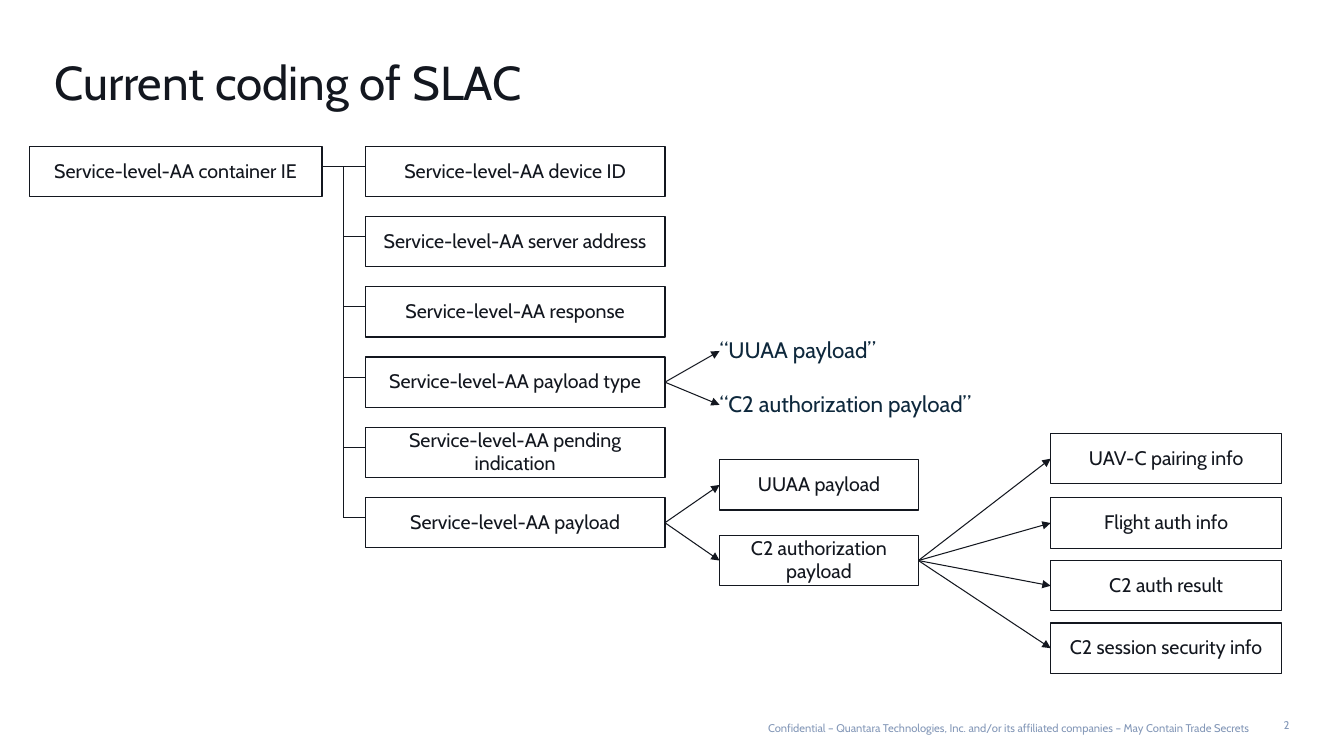
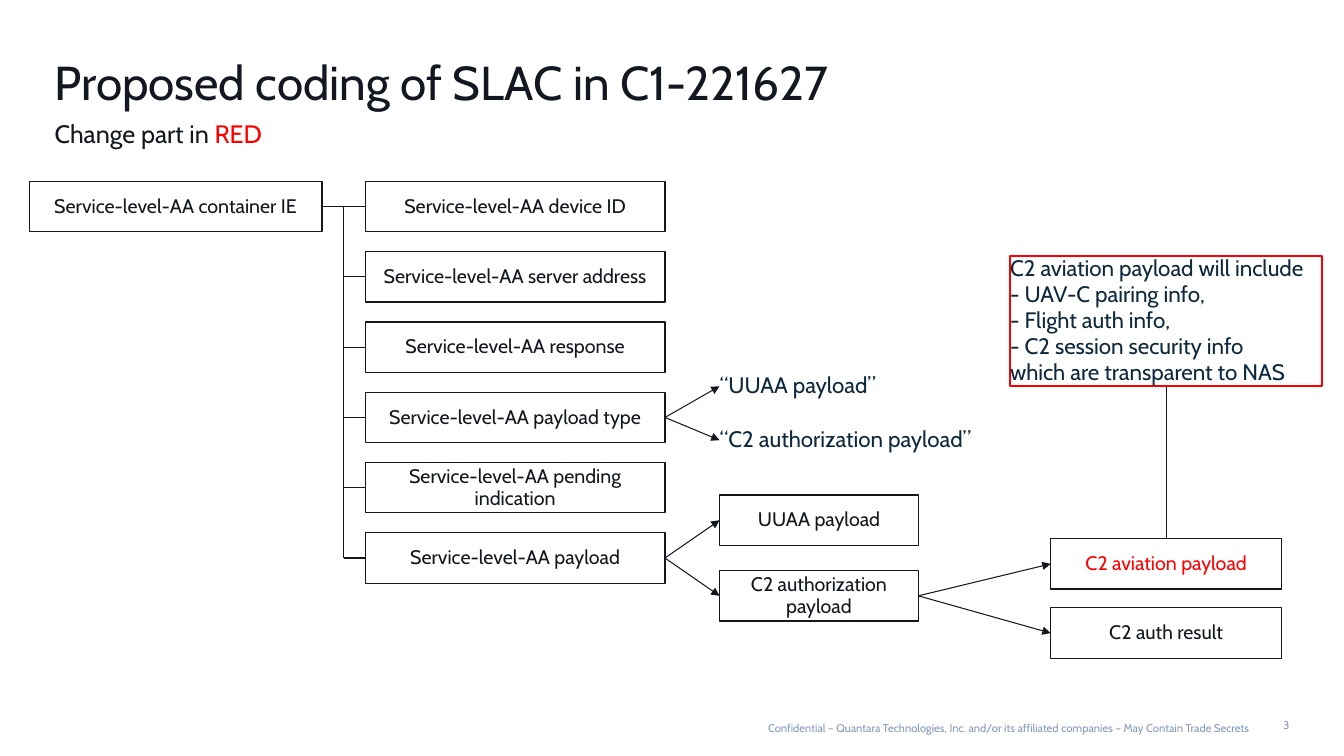
from pptx import Presentation
from pptx.dml.color import RGBColor
from pptx.enum.shapes import MSO_CONNECTOR as LINE, MSO_SHAPE as SHAPE
from pptx.enum.text import MSO_ANCHOR as ANCHOR, PP_ALIGN as ALIGN
from pptx.oxml.ns import qn
from pptx.util import Pt
from lxml.etree import SubElement

INK = RGBColor(0x13, 0x17, 0x1F)
NAVY = RGBColor(0x0E, 0x28, 0x3C)
MUTED = RGBColor(0x84, 0x98, 0xB8)
RED = RGBColor(0xFF, 0x00, 0x00)
WHITE = RGBColor(0xFF, 0xFF, 0xFF)
FONT = "Cabin"
FOOTER = ("Confidential – Quantara Technologies, Inc. and/or its affiliated "
          "companies – May Contain Trade Secrets")

# Diagram grid: column edges, box height and row pitch
ROOT, ROOT_W = 21, 209
FIELD, FIELD_W = 261, 214
LOAD, LOAD_W = 514, 142
INFO, INFO_W = 750.5, 165
SPINE = 245.5
HIGH, PITCH = 36, 50.2
MID = HIGH / 2

FIELDS = ["device ID", "server address", "response", "payload type",
          "pending indication", "payload"]
TYPES = [("“UUAA payload”", 137), ("“C2 authorization payload”", 175.5)]
LOADS = [("UUAA payload", 224), ("C2 authorization payload", 278)]
NOTE = ["C2 aviation payload will include", "- UAV-C pairing info,",
        "- Flight auth info,", "- C2 session security info",
        "which are transparent to NAS"]

# What differs: top and stub are heights, info rows are offsets from the top
SLIDES = [
    dict(num=2, title="Current coding of SLAC", top=104.4, stub=14.4,
         info=[("UAV-C pairing info", 205.2, INK),
               ("Flight auth info", 251.2, INK),
               ("C2 auth result", 296, INK),
               ("C2 session security info", 340.6, INK)]),
    dict(num=3, title="Proposed coding of SLAC in C1-221627", top=129.6, stub=18,
         sub=[("Change part in ", INK), ("RED", RED)], note=NOTE,
         info=[("C2 aviation payload", 255.2, RED),
               ("C2 auth result", 304.6, INK)]),
]


def write(shape, paras, size, align=ALIGN.LEFT, anchor=ANCHOR.TOP,
          space=0.96, pad=(0, 0)):
    """Fill a shape with paragraphs, each a list of (text, colour) runs."""
    frame = shape.text_frame
    frame.word_wrap = True
    frame.vertical_anchor = anchor
    frame.margin_left = frame.margin_right = Pt(pad[0])
    frame.margin_top = frame.margin_bottom = Pt(pad[1])
    for i, runs in enumerate(paras):
        para = frame.add_paragraph() if i else frame.paragraphs[0]
        para.alignment = align
        para.line_spacing = space
        for text, color in runs:
            run = para.add_run()
            run.text = text
            run.font.name = FONT
            run.font.size = Pt(size)
            run.font.color.rgb = color


def link(shapes, x1, y1, x2, y2, arrow=False):
    """Draw a thin line, with an arrowhead at its end if asked."""
    line = shapes.add_connector(LINE.STRAIGHT, Pt(x1), Pt(y1), Pt(x2), Pt(y2))
    line.line.color.rgb = INK
    line.line.width = Pt(0.75)
    if arrow:
        SubElement(line.line._get_or_add_ln(), qn("a:tailEnd"), type="triangle")
    SubElement(line._element.spPr, qn("a:effectLst"))


prs = Presentation()
prs.slide_width, prs.slide_height = Pt(960), Pt(540)

for page in SLIDES:
    shapes = prs.slides.add_slide(prs.slide_layouts[5]).shapes
    top = page["top"]

    # Title
    title = shapes.title
    title.left, title.top, title.width, title.height = Pt(39), Pt(43), Pt(880), Pt(36)
    write(title, [[(page["title"], INK)]], 34, anchor=ANCHOR.BOTTOM, space=0.84)

    # Footer and page number
    for text, x, y, wide, space in [(FOOTER, 518, 514.8, 375, 0.95),
                                    (str(page["num"]), 900, 512.6, 21, 1.25)]:
        foot = shapes.add_textbox(Pt(x), Pt(y), Pt(wide), Pt(10))
        write(foot, [[(text, MUTED)]], 8, ALIGN.RIGHT, ANCHOR.BOTTOM, space)

    # Subtitle
    if "sub" in page:
        sub = shapes.add_textbox(Pt(39), Pt(85.7), Pt(881), Pt(21.6))
        write(sub, [page["sub"]], 18)

    # Boxes of all four columns
    boxes = [("Service-level-AA container IE", ROOT, 0, ROOT_W, INK)]
    boxes += [(f"Service-level-AA {name}", FIELD, i * PITCH, FIELD_W, INK)
              for i, name in enumerate(FIELDS)]
    boxes += [(name, LOAD, y, LOAD_W, INK) for name, y in LOADS]
    boxes += [(name, INFO, y, INFO_W, color) for name, y, color in page["info"]]
    for text, x, y, wide, color in boxes:
        box = shapes.add_shape(SHAPE.RECTANGLE, Pt(x), Pt(top + y), Pt(wide), Pt(HIGH))
        box.shadow.inherit = False
        box.fill.solid()
        box.fill.fore_color.rgb = WHITE
        box.line.color.rgb = INK
        box.line.width = Pt(0.85)
        write(box, [[(text, color)]], 14, ALIGN.CENTER, ANCHOR.MIDDLE, pad=(7.2, 3.6))

    # Payload type values
    for text, y in TYPES:
        label = shapes.add_textbox(Pt(LOAD), Pt(top + y), Pt(223), Pt(18.5))
        write(label, [[(text, NAVY)]], 16)

    # Bracket from the container to its fields
    stub = top + page["stub"]
    link(shapes, SPINE, stub, SPINE, stub + (len(FIELDS) - 1) * PITCH)
    for i in range(len(FIELDS)):
        link(shapes, SPINE if i else ROOT + ROOT_W, stub + i * PITCH,
             FIELD, stub + i * PITCH)

    # Arrows fanning out to the right
    end = FIELD + FIELD_W
    fans = [(end, 3 * PITCH, LOAD, [y + 9.3 for _, y in TYPES]),
            (end, 5 * PITCH, LOAD, [y + MID for _, y in LOADS]),
            (LOAD + LOAD_W, LOADS[1][1], INFO, [y + MID for _, y, _ in page["info"]])]
    for x1, y1, x2, tips in fans:
        for tip in tips:
            link(shapes, x1, top + y1 + MID, x2, top + tip, arrow=True)

    # Red note above the changed box
    if "note" in page:
        x, y, wide, high = 721.5, 183, 223, 93
        link(shapes, x + wide / 2 + 0.5, top + page["info"][0][1],
             x + wide / 2 + 0.5, y + high)
        note = shapes.add_shape(SHAPE.RECTANGLE, Pt(x), Pt(y), Pt(wide), Pt(high))
        note.shadow.inherit = False
        note.fill.background()
        note.line.color.rgb = RED
        note.line.width = Pt(1.5)
        write(note, [[(text, NAVY)] for text in page["note"]], 16)

prs.save("out.pptx")
